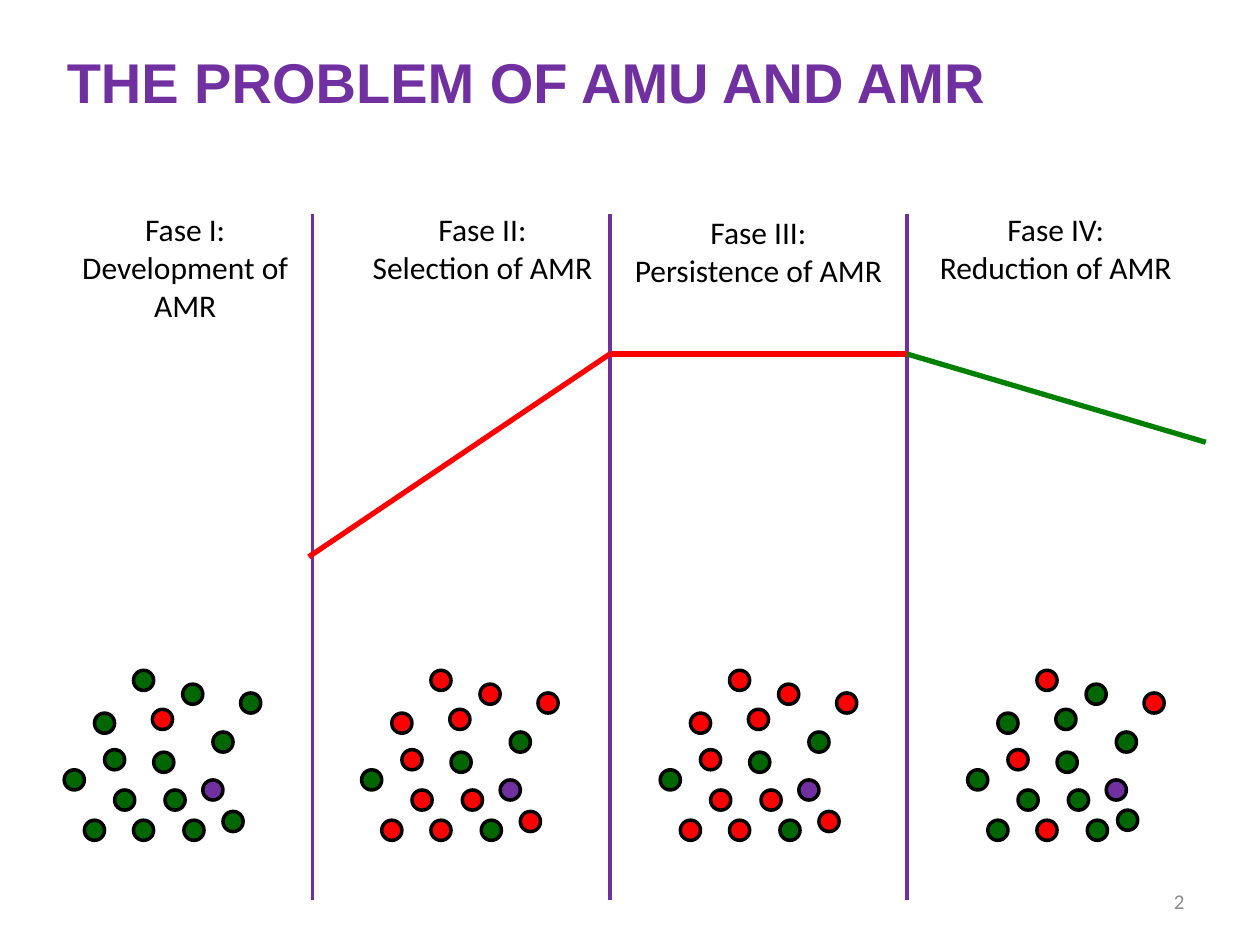
from lxml import etree
from pptx import Presentation
from pptx.dml.color import RGBColor
from pptx.enum.shapes import MSO_CONNECTOR, MSO_SHAPE
from pptx.enum.text import MSO_ANCHOR, MSO_AUTO_SIZE, PP_ALIGN
from pptx.oxml.ns import qn
from pptx.util import Inches, Pt

STRAIGHT = MSO_CONNECTOR.STRAIGHT
OVAL = MSO_SHAPE.OVAL
TOP, MIDDLE = MSO_ANCHOR.TOP, MSO_ANCHOR.MIDDLE
FIXED = MSO_AUTO_SIZE.NONE
LEFT, CENTER, RIGHT = PP_ALIGN.LEFT, PP_ALIGN.CENTER, PP_ALIGN.RIGHT

PURPLE = RGBColor(0x70, 0x30, 0xA0)
RED = RGBColor(0xFF, 0x00, 0x00)
GREEN = RGBColor(0x00, 0x80, 0x00)
DARK = RGBColor(0x00, 0x66, 0x00)
BLACK = RGBColor(0x00, 0x00, 0x00)
GREY = RGBColor(0x8C, 0x8C, 0x8C)

HEAD = {"name": "Arial", "size": Pt(32), "bold": True}
LABEL = {"name": "Calibri", "size": Pt(18)}
SMALL = {"name": "Calibri", "size": Pt(12)}

STEP = 2.36
WALLS = [2.48 + STEP * i for i in range(3)]
PEAK = 2.81
TRENDS = [
    ((2.45, 4.42), (WALLS[1], PEAK), RED),
    ((WALLS[2], PEAK), (WALLS[1], PEAK), RED),
    ((WALLS[2], PEAK), (9.57, 3.51), GREEN),
]
PHASES = [
    (0.29, 1.62, 1.01, "Fase I:\nDevelopment of AMR"),
    (2.65, 1.62, 0.71, "Fase II:\nSelection of AMR"),
    (4.84, 1.64, 0.71, "Fase III:\nPersistence of AMR"),
    (7.2, 1.62, 0.71, "Fase IV:\nReduction of AMR"),
]
DOT = 0.16
SPOTS = [
    (1.21, 5.63), (1.61, 6.19), (1.22, 5.97), (0.83, 5.95),
    (1.91, 5.5), (0.75, 5.66), (1.69, 5.81), (0.91, 6.27),
    (1.31, 6.27), (1.06, 6.51), (1.77, 6.44), (1.45, 5.43),
    (1.06, 5.32), (0.67, 6.51), (1.46, 6.51), (0.51, 6.11),
]
LAST = SPOTS[:10] + [(1.7, 6.43)] + SPOTS[11:]
FILLS = {"R": RED, "P": PURPLE, "G": DARK}
GROUPS = [
    (0, SPOTS, "RPGGGGGGGGGGGGGG"),
    (2.36, SPOTS, "RPGRRRGRRRRRRRGG"),
    (4.73, SPOTS, "RPGRRRGRRRRRRRGG"),
    (7.17, LAST, "GPGRRGGGGRGGRGGG"),
]


def set_text(shape, text, font, color, align, anchor):
    frame = shape.text_frame
    frame.text = text
    frame.word_wrap = True
    frame.auto_size = FIXED
    frame.vertical_anchor = anchor
    for para in frame.paragraphs:
        para.alignment = align
        for run in para.runs:
            for key, value in font.items():
                setattr(run.font, key, value)
            run.font.color.rgb = color


def add_title(slide, text):
    title = slide.shapes.title
    box = {"left": 0.43, "top": 0.29, "width": 8.63, "height": 0.7}
    for key, value in box.items():
        setattr(title, key, Inches(value))
    set_text(title, text, HEAD, PURPLE, LEFT, MIDDLE)


def add_text(slide, box, text, font, color, align, anchor):
    shape = slide.shapes.add_textbox(*map(Inches, box))
    set_text(shape, text, font, color, align, anchor)


def add_line(slide, start, end, color, width):
    line = slide.shapes.add_connector(STRAIGHT, *map(Inches, start + end))
    line.line.color.rgb = color
    line.line.width = Pt(width)
    etree.SubElement(line._element.spPr, qn("a:effectLst"))


def add_dot(slide, left, top, color):
    dot = slide.shapes.add_shape(OVAL, *map(Inches, (left, top, DOT, DOT)))
    dot.shadow.inherit = False
    dot.fill.solid()
    dot.fill.fore_color.rgb = color
    dot.line.color.rgb = BLACK
    dot.line.width = Pt(2)


def main():
    deck = Presentation()
    deck.slide_width, deck.slide_height = Inches(10), Inches(7.5)
    slide = deck.slides.add_slide(deck.slide_layouts[5])
    add_title(slide, "THE PROBLEM OF AMU AND AMR")
    for left in WALLS:
        add_line(slide, (left, 1.7), (left, 7.14), PURPLE, 2.25)
    for start, end, color in TRENDS:
        add_line(slide, start, end, color, 3)
    for shift, spots, codes in GROUPS:
        for (left, top), code in zip(spots, codes):
            add_dot(slide, left + shift, top, FILLS[code])
    for left, top, height, text in PHASES:
        box = (left, top, STEP, height)
        add_text(slide, box, text, LABEL, BLACK, CENTER, TOP)
    add_text(slide, (7.17, 6.95, 2.33, 0.4), "2", SMALL, GREY, RIGHT, MIDDLE)
    deck.save("out.pptx")


if __name__ == "__main__":
    main()
